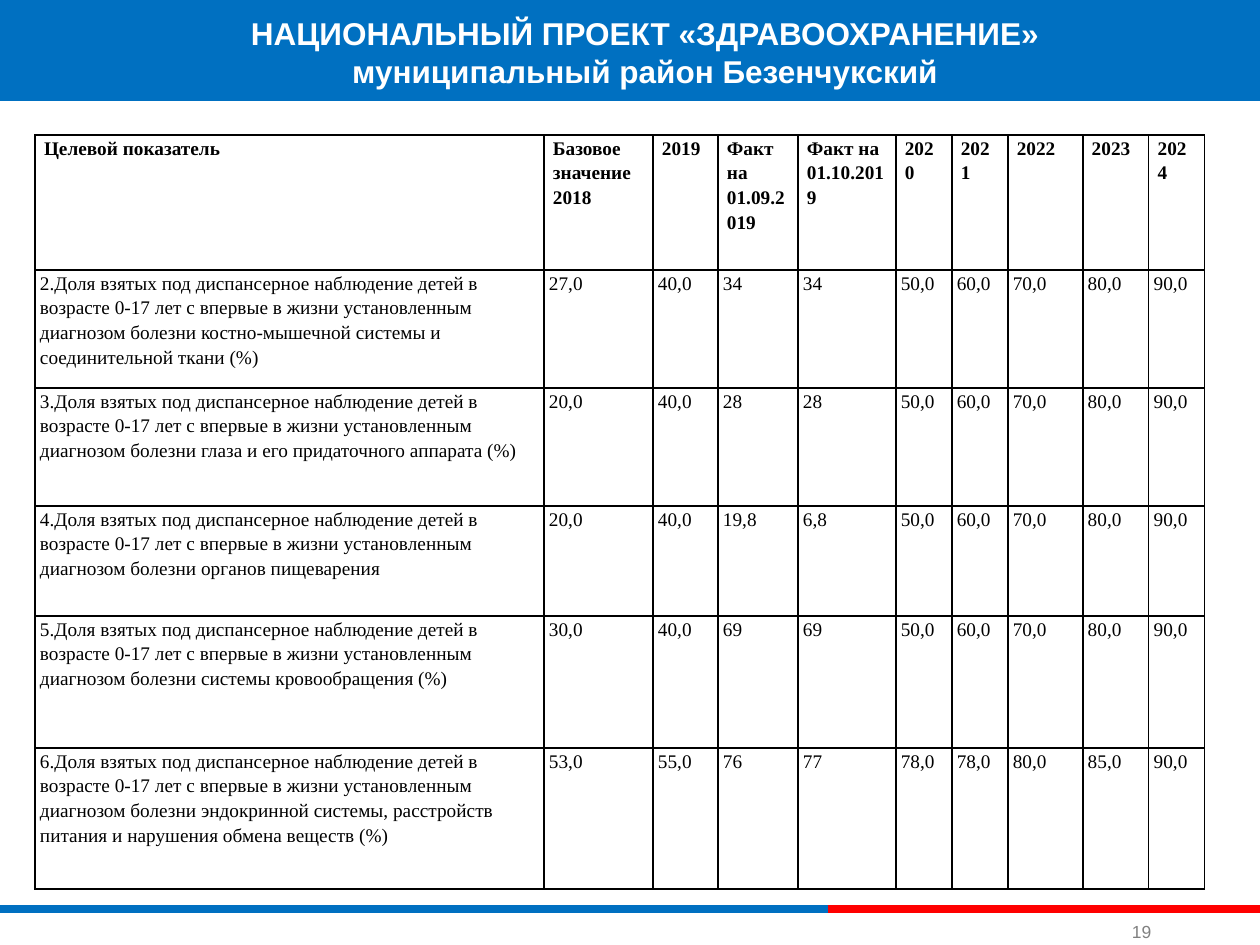
from dataclasses import dataclass

from lxml.etree import SubElement
from pptx import Presentation
from pptx.dml.color import RGBColor
from pptx.enum.shapes import MSO_CONNECTOR as Connector, MSO_SHAPE as Shape
from pptx.enum.text import MSO_ANCHOR as Anchor, MSO_AUTO_SIZE as AutoSize, PP_ALIGN as Align
from pptx.oxml.ns import qn
from pptx.util import Emu, Pt


@dataclass(frozen=True)
class Theme:
    blue: str = "0070C1"
    red: str = "FF0000"
    white: str = "FFFFFF"
    black: str = "000000"
    grey: str = "808080"
    sans: str = "Arial"
    serif: str = "Times New Roman"
    title_size: int = 18
    table_size: int = 11
    number_size: int = 10
    rule_width: int = 5
    border_width: int = 1
    table_spacing: float = 1.15


THEME = Theme()
TITLE = "НАЦИОНАЛЬНЫЙ ПРОЕКТ «ЗДРАВООХРАНЕНИЕ»\nмуниципальный район Безенчукский"
SLIDE_NUMBER = "19"
HEADER = ["Целевой показатель", "Базовое значение\n2018", "2019", "Факт на 01.09.2019",
          "Факт на 01.10.2019", "2020", "2021", "2022", "2023", "2024"]
INDICATOR = ("{}.Доля взятых под диспансерное наблюдение детей в возрасте 0-17 лет "
             "с впервые в жизни установленным диагнозом болезни {}")
INDICATORS = [
    ("костно-мышечной системы и соединительной ткани (%)",
     ["27,0", "40,0", "34", "34", "50,0", "60,0", "70,0", "80,0", "90,0"]),
    ("глаза и его придаточного аппарата (%)",
     ["20,0", "40,0", "28", "28", "50,0", "60,0", "70,0", "80,0", "90,0"]),
    ("органов пищеварения",
     ["20,0", "40,0", "19,8", "6,8", "50,0", "60,0", "70,0", "80,0", "90,0"]),
    ("системы кровообращения (%)",
     ["30,0", "40,0", "69", "69", "50,0", "60,0", "70,0", "80,0", "90,0"]),
    ("эндокринной системы, расстройств питания и нарушения обмена веществ (%)",
     ["53,0", "55,0", "76", "77", "78,0", "78,0", "80,0", "85,0", "90,0"]),
]

SLIDE_SIZE = (1260, 945)
BANNER_BOX = (0, -4, 1260, 105)
TITLE_BOX = (237, 8, 816, 127)
NUMBER_BOX = (1126, 916, 24, 32)
TABLE_ORIGIN = (35, 135)
COLUMN_WIDTHS = [509, 109, 65, 80, 98, 56, 56, 75, 66, 56]
ROW_HEIGHTS = [135, 118, 118, 110, 132, 141]
RULE_TOP = 909
RULES = [(0, 828, THEME.blue), (828, 1260, THEME.red)]
TEXT_INSET, HEADER_INSET, BODY_INSET = 6, 9, 5


def px(length):
    return Emu(round(length * 914400 / 126))


def colour(value):
    return RGBColor.from_string(value)


def set_insets(target, horizontal, vertical):
    target.margin_left = target.margin_right = px(horizontal)
    target.margin_top = target.margin_bottom = px(vertical)


def write(frame, text, font, size, text_colour, bold=False, align=Align.LEFT, spacing=1.0):
    frame.text = text
    for paragraph in frame.paragraphs:
        paragraph.alignment = align
        paragraph.line_spacing = spacing
        for run in paragraph.runs:
            run.font.name = font
            run.font.size = Pt(size)
            run.font.bold = bold
            run.font.color.rgb = colour(text_colour)


def fit_label(shape, anchor):
    frame = shape.text_frame
    frame.word_wrap = False
    frame.auto_size = AutoSize.NONE
    frame.vertical_anchor = anchor
    set_insets(frame, TEXT_INSET, TEXT_INSET)
    return frame


def add_rule(slide, start, end, rule_colour):
    rule = slide.shapes.add_connector(
        Connector.STRAIGHT, px(start), px(RULE_TOP), px(end), px(RULE_TOP))
    rule.line.color.rgb = colour(rule_colour)
    rule.line.width = Pt(THEME.rule_width)
    SubElement(rule.element.spPr, qn("a:effectLst"))


def add_banner(slide):
    banner = slide.shapes.add_shape(Shape.RECTANGLE, *map(px, BANNER_BOX))
    banner.shadow.inherit = False
    banner.fill.solid()
    banner.fill.fore_color.rgb = colour(THEME.blue)
    banner.line.fill.background()


def add_title(slide):
    title = slide.shapes.title
    title.left, title.top, title.width, title.height = map(px, TITLE_BOX)
    write(fit_label(title, Anchor.TOP), TITLE, THEME.sans, THEME.title_size,
          THEME.white, bold=True, align=Align.CENTER)
    slide.shapes.element.append(title.element)


def add_slide_number(slide):
    label = slide.shapes.add_textbox(*map(px, NUMBER_BOX))
    write(fit_label(label, Anchor.BOTTOM), SLIDE_NUMBER, THEME.sans,
          THEME.number_size, THEME.grey)


def set_borders(cell):
    properties = cell._tc.get_or_add_tcPr()
    for side in ("lnL", "lnR", "lnT", "lnB"):
        border = SubElement(properties, qn(f"a:{side}"), w=str(Pt(THEME.border_width)))
        fill = SubElement(border, qn("a:solidFill"))
        SubElement(fill, qn("a:srgbClr"), val=THEME.black)


def add_indicator_table(slide):
    rows = [HEADER] + [[INDICATOR.format(number, disease), *values]
                       for number, (disease, values) in enumerate(INDICATORS, start=2)]
    table = slide.shapes.add_table(
        len(rows), len(HEADER), *map(px, TABLE_ORIGIN),
        px(sum(COLUMN_WIDTHS)), px(sum(ROW_HEIGHTS))).table
    table.first_row = table.horz_banding = False
    for column, width in zip(table.columns, COLUMN_WIDTHS):
        column.width = px(width)
    for row, height in zip(table.rows, ROW_HEIGHTS):
        row.height = px(height)
    for row_index, texts in enumerate(rows):
        is_header = row_index == 0
        for column_index, text in enumerate(texts):
            cell = table.cell(row_index, column_index)
            set_insets(cell, HEADER_INSET if is_header else BODY_INSET, 0)
            set_borders(cell)
            cell.fill.background()
            write(cell.text_frame, text, THEME.serif, THEME.table_size, THEME.black,
                  bold=is_header, spacing=THEME.table_spacing)


def main():
    presentation = Presentation()
    presentation.slide_width, presentation.slide_height = map(px, SLIDE_SIZE)
    slide = presentation.slides.add_slide(presentation.slide_layouts.get_by_name("Title Only"))
    slide.background.fill.solid()
    slide.background.fill.fore_color.rgb = colour(THEME.white)
    for rule in RULES:
        add_rule(slide, *rule)
    add_banner(slide)
    add_slide_number(slide)
    add_title(slide)
    add_indicator_table(slide)
    presentation.save("out.pptx")


if __name__ == "__main__":
    main()
